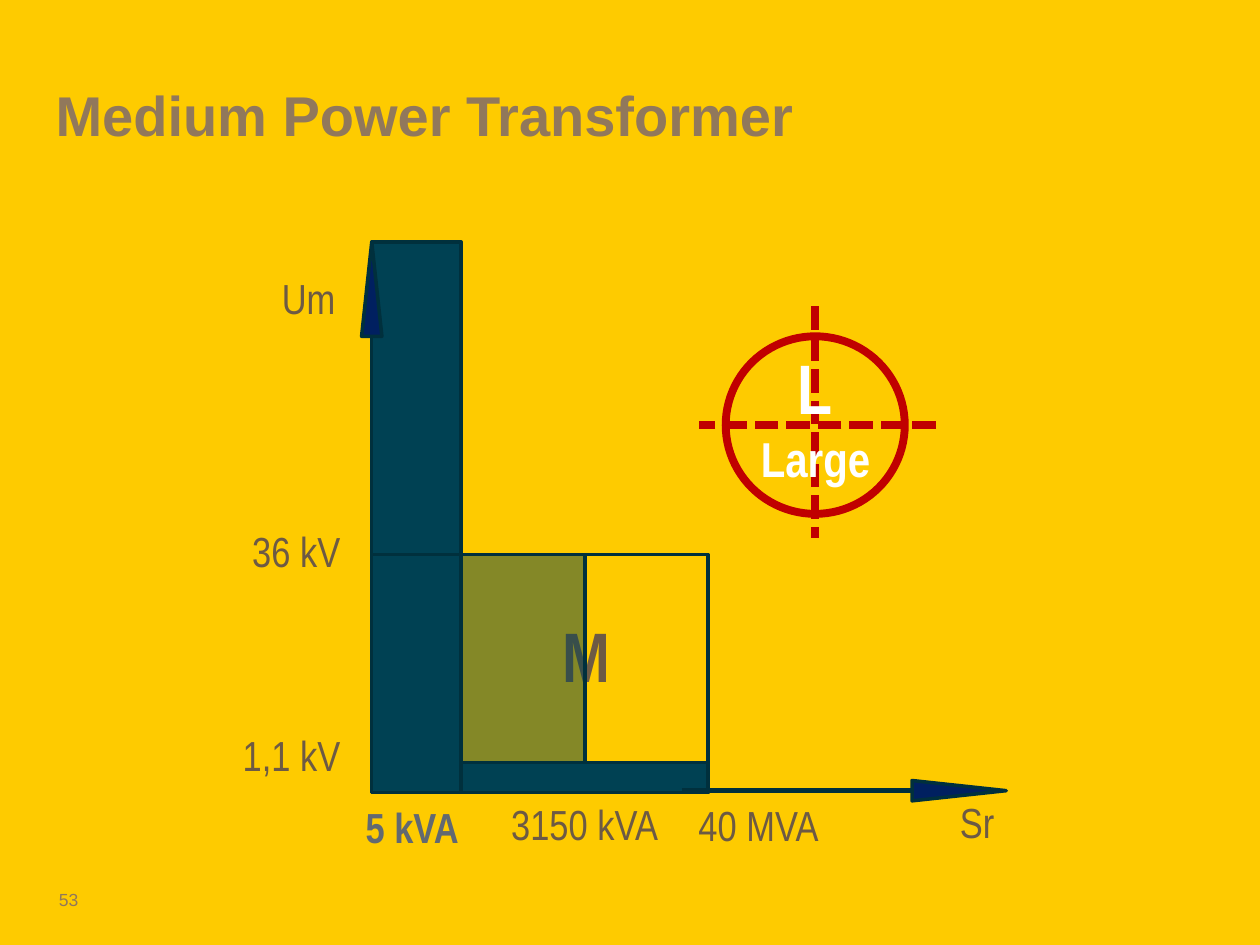
import pptx
import pptx.util
import pptx.dml.color
import pptx.enum.dml
import pptx.enum.shapes
import pptx.enum.text
import lxml.etree

Cm, Pt = pptx.util.Cm, pptx.util.Pt
Shape = pptx.enum.shapes.MSO_SHAPE
Align = pptx.enum.text.PP_ALIGN
Anchor = pptx.enum.text.MSO_ANCHOR
Dash = pptx.enum.dml.MSO_LINE

YELLOW, TEAL, EDGE, NAVY = "FECB00", "004153", "00303D", "002060"
RED, WHITE, BROWN, TAN, GREY = "C00000", "FFFFFF", "6D5A44", "91785B", "626971"


def color(text):
    return pptx.dml.color.RGBColor.from_string(text)


def child(parent, tag, **attrs):
    return lxml.etree.SubElement(parent, pptx.oxml.ns.qn(tag), **attrs)


class Board:
    """Holds the style and the current slide."""
    face, label = "Arial", "Arial Narrow"

    def __init__(self, deck):
        self.slide = deck.slides.add_slide(deck.slide_layouts[5])
        self.shapes = self.slide.shapes
        fill = self.slide.background.fill
        fill.solid()
        fill.fore_color.rgb = color(YELLOW)

    def style(self, font, size, hue, bold, face):
        font.size, font.bold, font.name = Pt(size), bold, face
        font.color.rgb = color(hue)

    def flush(self, frame):
        """Remove the insets and align the text to the top."""
        frame.margin_left = frame.margin_right = 0
        frame.margin_top = frame.margin_bottom = 0
        frame.vertical_anchor = Anchor.TOP

    def title(self, text, x, y, w, h):
        box = self.shapes.title
        box.left, box.top, box.width, box.height = map(Cm, (x, y, w, h))
        self.flush(box.text_frame)
        box.text_frame.text = text
        para = box.text_frame.paragraphs[0]
        para.alignment = Align.LEFT
        self.style(para.font, 32, TAN, True, self.face)

    def text(self, text, x, y, w=3.2, h=1.4, align=Align.CENTER,
             size=24, hue=BROWN, bold=False, face=None):
        box = self.shapes.add_textbox(Cm(x), Cm(y), Cm(w), Cm(h))
        frame = box.text_frame
        frame.word_wrap = True
        para = frame.paragraphs[0]
        para.text = text
        para.alignment = align
        self.style(para.font, size, hue, bold, face or self.label)
        return frame

    def number(self, text, x, y, w, h):
        self.flush(self.text(text, x, y, w, h, Align.LEFT, 10, TAN,
                             face=self.face))

    def shape(self, kind, x, y, w, h, fill=None, line=EDGE, width=2,
              turn=0, alpha=None):
        item = self.shapes.add_shape(kind, Cm(x), Cm(y), Cm(w), Cm(h))
        item.shadow.inherit = False
        item.rotation = turn
        item.line.color.rgb = color(line)
        item.line.width = Pt(width)
        if fill is None:
            item.fill.background()
            return
        item.fill.solid()
        item.fill.fore_color.rgb = color(fill)
        if alpha:
            tint = item.fill._xPr.find(".//" + pptx.oxml.ns.qn("a:srgbClr"))
            child(tint, "a:alpha", val=str(alpha * 1000))

    def area(self, x1, y1, x2, y2, **look):
        self.shape(Shape.RECTANGLE, x1, y1, x2 - x1, y2 - y1, **look)

    def line(self, x1, y1, x2, y2, hue=EDGE, width=2.75, dash=None):
        item = self.shapes.add_connector(
            pptx.enum.shapes.MSO_CONNECTOR.STRAIGHT,
            Cm(x1), Cm(y1), Cm(x2), Cm(y2))
        item.line.color.rgb = color(hue)
        item.line.width = Pt(width)
        if dash:
            item.line.dash_style = dash
        child(item._element.spPr, "a:effectLst")


def main():
    deck = pptx.Presentation()
    deck.slide_width, deck.slide_height = Cm(25.4), Cm(19.05)
    board = Board(deck)

    board.title("Medium Power Transformer", 1.12, 1.63, 17.55, 2.24)
    board.number("53", 1.19, 17.93, 0.71, 0.76)

    # Power limits run along x, voltage limits along y
    left, small, mid, right = 7.49, 9.3, 11.79, 14.27
    top, high, low, base = 4.88, 11.18, 15.37, 15.98
    board.area(left, top, small, base, fill=TEAL)
    board.area(small, low, right, base, fill=TEAL)
    board.area(left, high, right, base)
    board.line(13.74, 15.93, 18.39, 15.93)

    board.text("5 kVA", 6.71, 16.03, hue=GREY, bold=True)
    board.text("40 MVA", 13.69, 16)
    board.text("3150 kVA", 9.83, 15.98, w=3.91)
    board.text("Sr", 18.9, 15.93, w=1.6)
    for name, x, y in (("1,1 kV", 3.91, 14.58), ("36 kV", 3.91, 10.46),
                       ("Um", 3.81, 5.36)):
        board.text(name, x, y, align=Align.RIGHT)
    board.text("M", 9.73, 12.22, 4.17, 1.85, size=40, bold=True)

    for x, y, turn in ((7.29, top, 0), (19.13, 14.99, 90)):
        board.shape(Shape.ISOSCELES_TRIANGLE, x, y, 0.41, 1.9,
                    fill=NAVY, turn=turn)
    board.area(small, high, mid, low, fill=TEAL, alpha=48)

    # Target around the large class
    board.shape(Shape.OVAL, 14.63, 6.78, 3.61, 3.58, line=RED, width=4.5)
    for ends in ((16.43, 6.17, 16.43, 10.85), (18.87, 8.56, 14.1, 8.56)):
        board.line(*ends, hue=RED, width=4.5, dash=Dash.SQUARE_DOT)
    frame = board.text("L\vLarge", 13.34, 6.83, 6.2, 1.85, size=40,
                       hue=WHITE, bold=True)
    frame.paragraphs[0].runs[1].font.size = Pt(28)

    deck.save("out.pptx")


if __name__ == "__main__":
    main()
